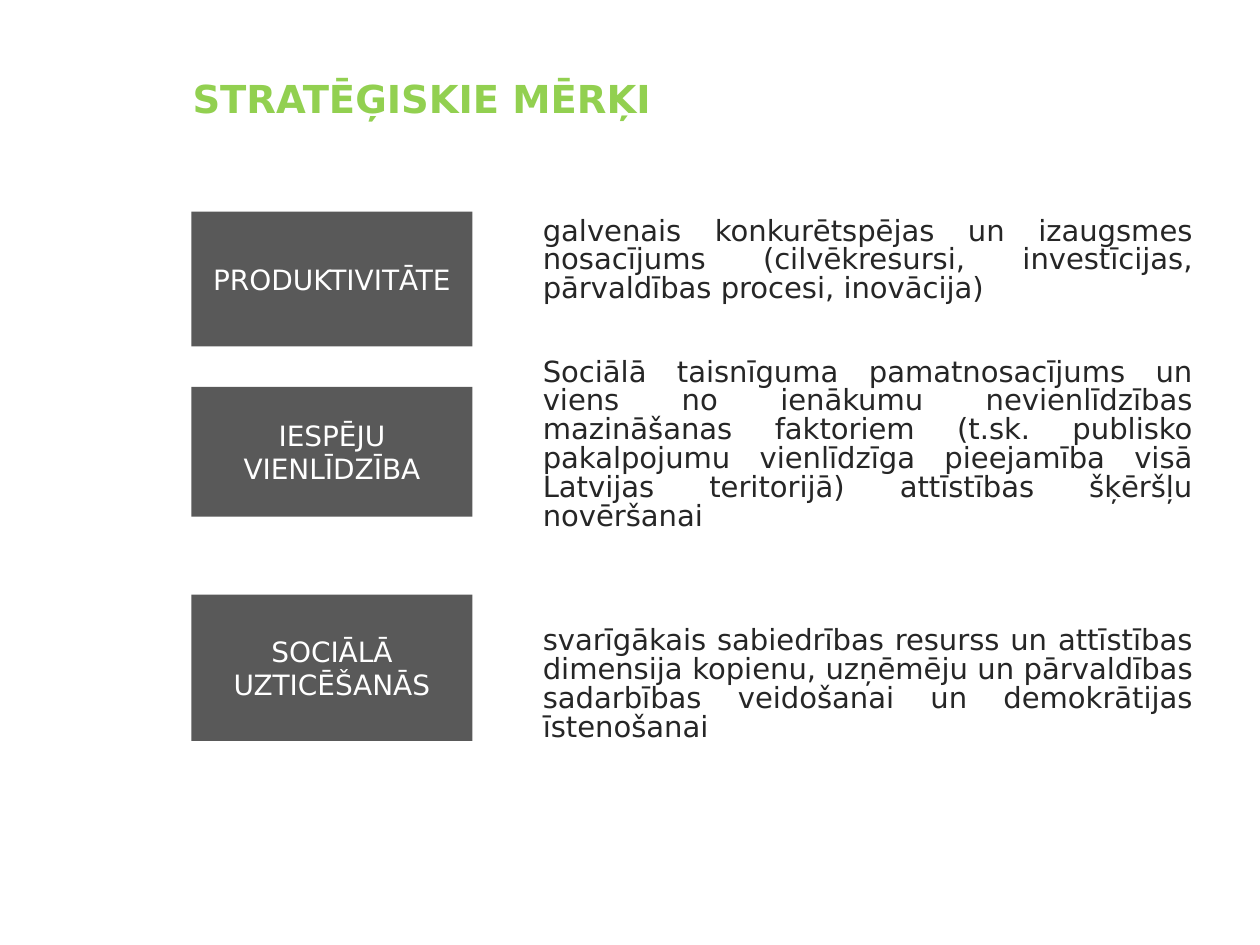
from pptx import Presentation
from pptx.dml.color import RGBColor
from pptx.enum.shapes import MSO_SHAPE
from pptx.enum.text import MSO_ANCHOR, PP_ALIGN
from pptx.util import Inches, Pt

RECT = MSO_SHAPE.RECTANGLE
TOP, MIDDLE = MSO_ANCHOR.TOP, MSO_ANCHOR.MIDDLE
LEFT, CENTER, JUSTIFY = PP_ALIGN.LEFT, PP_ALIGN.CENTER, PP_ALIGN.JUSTIFY

COLORS = {"title": "92D050", "body": "262626", "box": "595959", "label": "FFFFFF"}

# label, box top, box height
GOALS = [
    ("PRODUKTIVITĀTE", 1.68, 1.07),
    ("IESPĒJU VIENLĪDZĪBA", 3.07, 1.03),
    ("SOCIĀLĀ UZTICĒŠANĀS", 4.72, 1.16),
]

# description, space before in points
DESCRIPTIONS = [
    ("galvenais konkurētspējas un izaugsmes nosacījums (cilvēkresursi, "
     "investīcijas, pārvaldības procesi, inovācija)", 0),
    ("Sociālā taisnīguma pamatnosacījums un viens no ienākumu nevienlīdzības "
     "mazināšanas faktoriem (t.sk. publisko pakalpojumu vienlīdzīga pieejamība "
     "visā Latvijas teritorijā) attīstības šķēršļu novēršanai", 31),
    ("svarīgākais sabiedrības resurss un attīstības dimensija kopienu, uzņēmēju "
     "un pārvaldības sadarbības veidošanai un demokrātijas īstenošanai", 54.5),
]


class SlideBuilder:
    font = "DejaVu Sans"

    def __init__(self, slide):
        self.s = slide

    def color(self, name):
        return RGBColor.from_string(COLORS[name])

    def fill_text(self, sp, paragraphs, size, color, align, anchor,
                  spacing=1.0, bold=False):
        """Write (text, space before) pairs into a shape, one paragraph each."""
        tf = sp.text_frame
        tf.word_wrap = True
        tf.vertical_anchor = anchor
        for i, (text, before) in enumerate(paragraphs):
            p = tf.add_paragraph() if i else tf.paragraphs[0]
            p.alignment = align
            p.line_spacing = spacing
            if before:
                p.space_before = Pt(before)
            r = p.add_run()
            r.text = text
            r.font.name = self.font
            r.font.size = Pt(size)
            r.font.bold = bold
            r.font.color.rgb = self.color(color)

    def text(self, x, y, w, h, paragraphs, **style):
        sp = self.s.shapes.add_textbox(Inches(x), Inches(y), Inches(w), Inches(h))
        self.fill_text(sp, paragraphs, **style)

    def box(self, x, y, w, h, label):
        sp = self.s.shapes.add_shape(RECT, Inches(x), Inches(y), Inches(w), Inches(h))
        sp.shadow.inherit = False
        sp.fill.solid()
        sp.fill.fore_color.rgb = self.color("box")
        sp.line.fill.background()
        self.fill_text(sp, [(label, 0)], 16, "label", CENTER, MIDDLE)


def main():
    prs = Presentation()
    prs.slide_width, prs.slide_height = Inches(10), Inches(7.5)
    page = SlideBuilder(prs.slides.add_slide(prs.slide_layouts[6]))

    page.text(1.43, 0.3, 8.41, 1.01, [("STRATĒĢISKIE MĒRĶI", 0)], size=22,
              color="title", align=LEFT, anchor=MIDDLE, spacing=0.9, bold=True)
    page.text(4.21, 1.68, 5.35, 4.29, DESCRIPTIONS, size=16.6,
              color="body", align=JUSTIFY, anchor=TOP, spacing=0.83)
    for label, top, height in GOALS:
        page.box(1.52, top, 2.23, height, label)

    prs.save("out.pptx")


if __name__ == "__main__":
    main()
